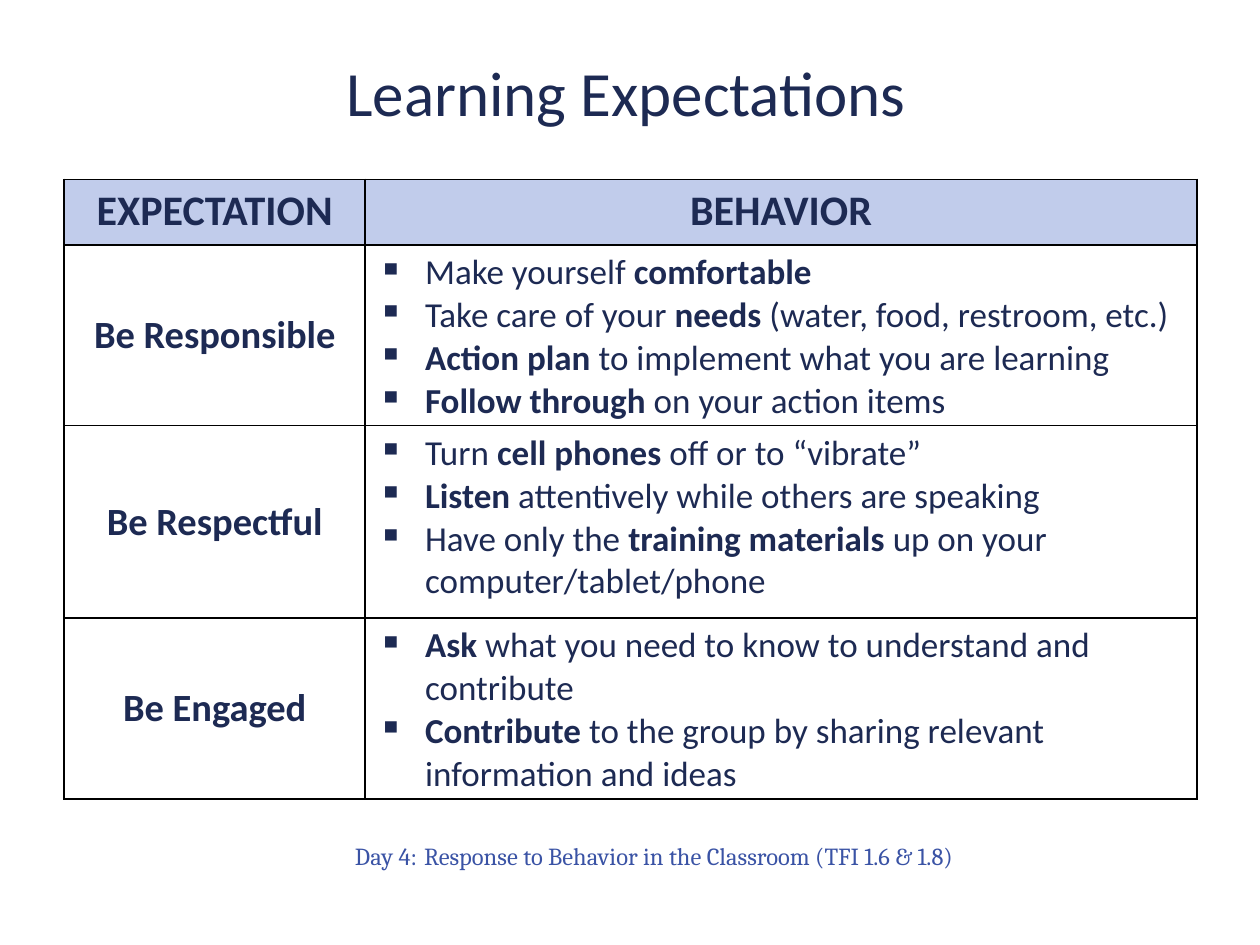
from lxml import etree
from pptx import Presentation
from pptx.dml.color import RGBColor
from pptx.enum.text import MSO_ANCHOR, PP_ALIGN
from pptx.oxml import parse_xml
from pptx.oxml.ns import nsdecls, qn
from pptx.util import Pt

NAVY = RGBColor(0x1D, 0x2A, 0x53)
BLUE = RGBColor(0x3A, 0x53, 0xA5)
PALE = RGBColor(0xC1, 0xCC, 0xEB)
WHITE = RGBColor(0xFF, 0xFF, 0xFF)
CENTER, RIGHT = PP_ALIGN.CENTER, PP_ALIGN.RIGHT
MIDDLE, TOP = MSO_ANCHOR.MIDDLE, MSO_ANCHOR.TOP
INDENT = Pt(27)

HEADS = ["EXPECTATION", "BEHAVIOR"]
RULES = [
    ("Be Responsible", [
        "Make yourself *comfortable",
        "Take care of your *needs* (water, food, restroom, etc.)",
        "*Action plan *to implement what you are learning",
        "*Follow through *on your action items",
    ]),
    ("Be Respectful", [
        "Turn *cell phones* off or to “vibrate”",
        "*Listen *attentively while others are speaking",
        "Have only the *training materials *up on your computer/tablet/phone",
    ]),
    ("Be Engaged", [
        "*Ask* what you need to know to understand and contribute",
        "*Contribute *to the group by sharing relevant information and ideas",
    ]),
]


def style(run, size, color=NAVY, face="Calibri", bold=False):
    font = run.font
    font.size, font.name, font.bold = Pt(size), face, bold
    font.color.rgb = color


def add_box(slide, box, anchor, align):
    frame = slide.shapes.add_textbox(*map(Pt, box)).text_frame
    frame.word_wrap = True
    frame.vertical_anchor = anchor
    para = frame.paragraphs[0]
    para.alignment = align
    return para


def add_title(slide, box):
    para = add_box(slide, box, MIDDLE, CENTER)
    para.text = "Learning Expectations"
    style(para.runs[0], 36)


def add_footer(slide, box):
    para = add_box(slide, box, TOP, RIGHT)
    parts = [("Day 4:", 14), (" ", 18),
             ("Response to Behavior in the Classroom (TFI 1.6 & 1.8)", 14)]
    for text, size in parts:
        run = para.add_run()
        run.text = text
        style(run, size, BLUE, "Cambria")


def hang(para):
    props = para._p.get_or_add_pPr()
    props.set("marL", str(INDENT))
    props.set("indent", str(-INDENT))
    return props


def add_bullet(para):
    props = hang(para)
    color = etree.SubElement(props, qn("a:buClr"))
    etree.SubElement(color, qn("a:srgbClr"), val=str(NAVY))
    etree.SubElement(props, qn("a:buChar"), char="▪")


def frame_cell(cell, fill):
    props = cell._tc.get_or_add_tcPr()
    for side in "LRTB":
        props.append(parse_xml(
            f'<a:ln{side} {nsdecls("a")} w="{Pt(1)}"><a:solidFill>'
            f'<a:srgbClr val="000000"/></a:solidFill></a:ln{side}>'))
    if fill is None:
        cell.fill.background()
    else:
        cell.fill.solid()
        cell.fill.fore_color.rgb = fill


def fill_label(cell, text, size, anchor, fill):
    frame_cell(cell, fill)
    cell.vertical_anchor = anchor
    para = cell.text_frame.paragraphs[0]
    para.text = text
    para.alignment = CENTER
    hang(para)
    style(para.runs[0], size, bold=True)


def fill_list(cell, items, fill):
    frame_cell(cell, fill)
    frame = cell.text_frame
    for i, item in enumerate(items):
        para = frame.add_paragraph() if i else frame.paragraphs[0]
        add_bullet(para)
        for j, part in enumerate(item.split("*")):
            if part:
                run = para.add_run()
                run.text = part
                style(run, 20, bold=j % 2 == 1)


def add_rules(slide, box, widths, heights):
    table = slide.shapes.add_table(
        len(heights), len(widths), *map(Pt, box)).table
    table.first_row = table.horz_banding = False
    for col, width in zip(table.columns, widths):
        col.width = Pt(width)
    for row, height in zip(table.rows, heights):
        row.height = Pt(height)
    for i, head in enumerate(HEADS):
        fill_label(table.cell(0, i), head, 24, TOP, PALE)
    for i, (name, items) in enumerate(RULES, 1):
        fill = WHITE if i == len(RULES) else None
        fill_label(table.cell(i, 0), name, 22, MIDDLE, fill)
        fill_list(table.cell(i, 1), items, fill)


def main():
    deck = Presentation()
    deck.slide_width, deck.slide_height = Pt(720), Pt(540)
    slide = deck.slides.add_slide(deck.slide_layouts[6])
    add_footer(slide, (107.3, 473, 552 - 107.3 + 107.3 - 107.3, 46))
    add_rules(slide, (36.7, 102.5, 647.3, 354.2),
              (172, 475.3), (37.5, 98.6, 110, 98.6))
    add_title(slide, (36.7, 27.4, 642.2, 49))
    deck.save("out.pptx")


if __name__ == "__main__":
    main()
